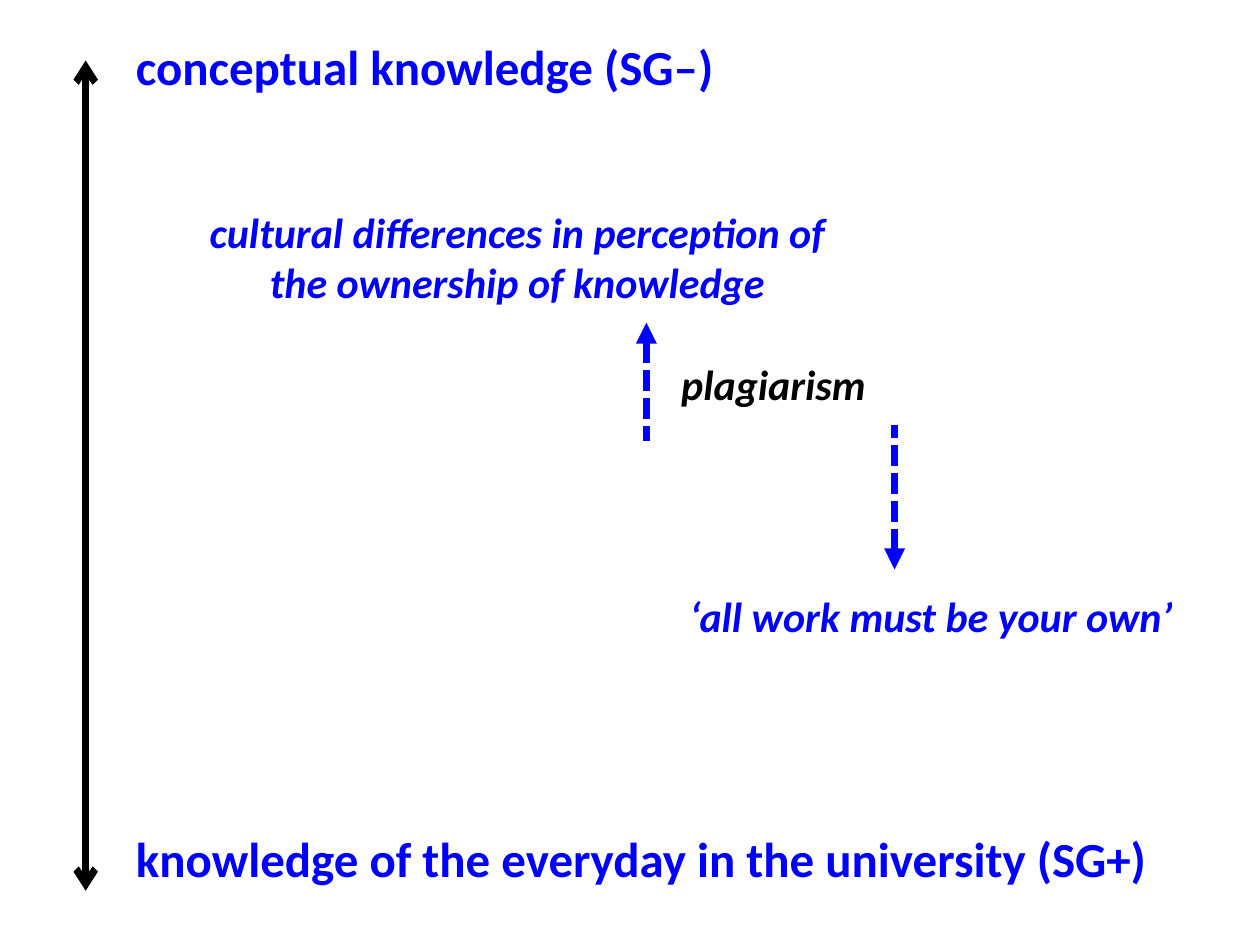
from lxml import etree
from pptx import Presentation, util as u
from pptx.dml.color import RGBColor
from pptx.enum import dml, shapes, text
from pptx.oxml.ns import qn

# Content: wording, left, top, width, height in inches
COLORS = {"blue": "0000FF", "black": "000000"}
FONT = "Calibri"
SLIDE_W, SLIDE_H = 10, 7.5
MARGIN, ROW_H = 0.98, 0.77

axis_ends = [
    ("conceptual knowledge (SG–)", MARGIN, 0.24, 7.28, ROW_H),
    ("knowledge of the everyday in the university (SG+)", MARGIN, 6.53, 8.78, ROW_H),
]
ideas = [
    ("cultural differences in perception of the ownership of knowledge",
     "blue", 1.43, 1.59, 5.35, ROW_H),
    ("plagiarism", "black", 4.36, 2.8, 3.56, 0.7),
    ("‘all work must be your own’", "blue", 4.97, 4.64, 4.84, ROW_H),
]
# x, y of the tip, y of the other end, colour, arrowheads, dashed
arrows = [
    (0.68, 0.48, 7.07, "black", {"headEnd": "arrow", "tailEnd": "arrow"}, False),
    (5.13, 2.56, 3.5, "blue", {"headEnd": "triangle"}, True),
    (7.1, 4.52, 3.37, "blue", {"headEnd": "triangle"}, True),
]

deck = Presentation()
deck.slide_width, deck.slide_height = u.Inches(SLIDE_W), u.Inches(SLIDE_H)
slide = deck.slides.add_slide(deck.slide_layouts[6])


def add_arrow(x, tip, end, color, heads, dashed):
    arrow = slide.shapes.add_connector(
        shapes.MSO_CONNECTOR.STRAIGHT, *map(u.Inches, (x, tip, x, end)))
    arrow.line.color.rgb = RGBColor.from_string(COLORS[color])
    arrow.line.width = u.Pt(4)
    if dashed:
        arrow.line.dash_style = dml.MSO_LINE.SQUARE_DOT
    outline = arrow.line._get_or_add_ln()
    for side, kind in heads.items():
        etree.SubElement(outline, qn("a:" + side), type=kind)
    etree.SubElement(arrow._element.spPr, qn("a:effectLst"))


def add_label(wording, box, color, size, italic, align):
    frame = slide.shapes.add_textbox(*map(u.Inches, box)).text_frame
    frame.word_wrap = True
    line = frame.paragraphs[0]
    line.alignment = align
    run = line.add_run()
    run.text = wording
    font = run.font
    font.name, font.size, font.bold, font.italic = FONT, u.Pt(size), True, italic
    font.color.rgb = RGBColor.from_string(COLORS[color])


# Vertical axis and the moves away from the middle idea
for arrow in arrows:
    add_arrow(*arrow)

# Names of the axis ends
for wording, *box in axis_ends:
    add_label(wording, box, "blue", 28, False, text.PP_ALIGN.LEFT)

# Ideas placed along the axis
for wording, color, *box in ideas:
    add_label(wording, box, color, 24, True, text.PP_ALIGN.CENTER)

deck.save("out.pptx")
